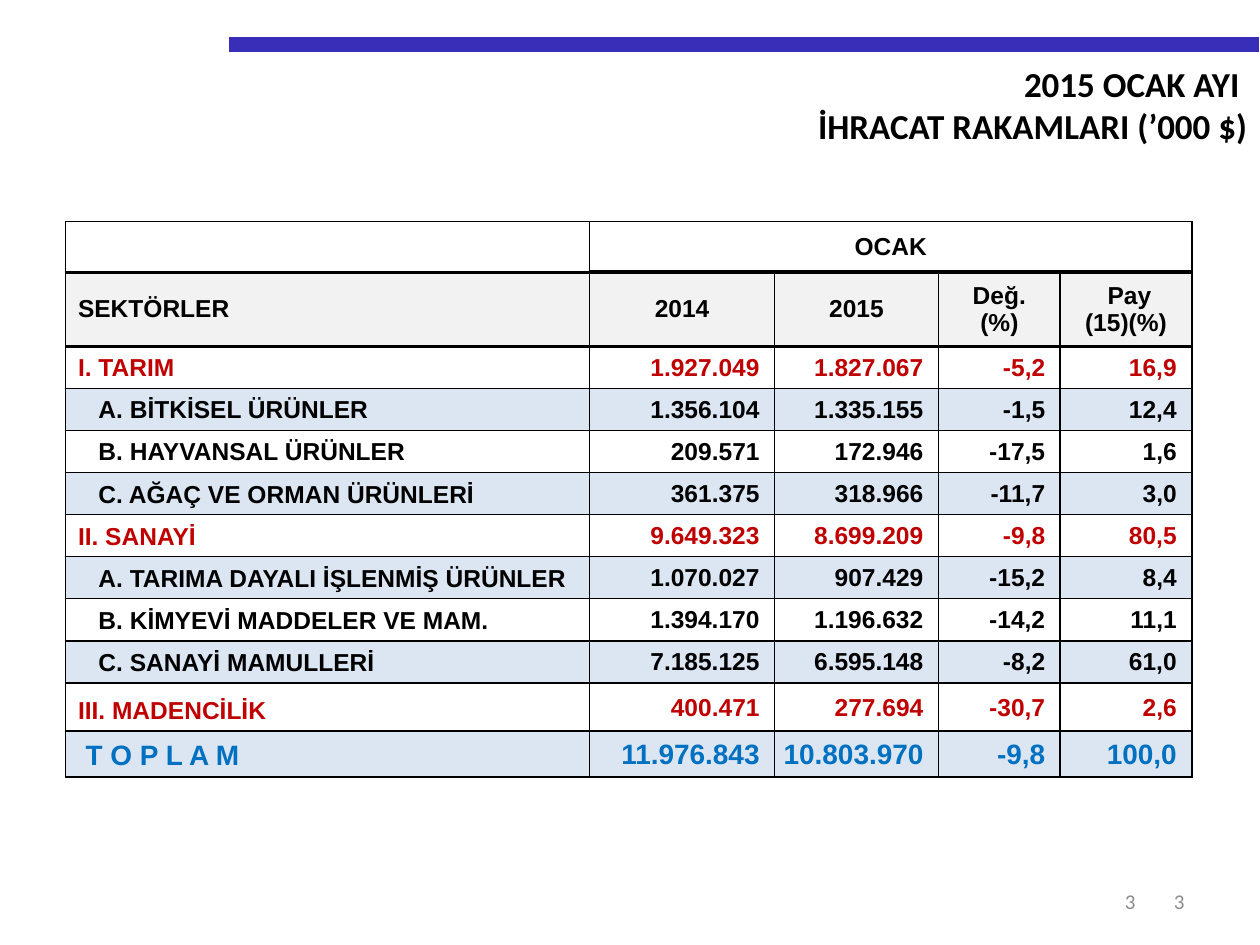
from lxml.etree import SubElement
from pptx import Presentation
from pptx.dml.color import RGBColor
from pptx.enum.shapes import MSO_CONNECTOR as Conn
from pptx.enum.text import MSO_ANCHOR as Anchor, PP_ALIGN as Align
from pptx.oxml import parse_xml
from pptx.oxml.ns import nsdecls, qn
from pptx.util import Pt

BLACK = RGBColor(0x00, 0x00, 0x00)
GRAY = RGBColor(0x8C, 0x8C, 0x8C)
INDIGO = RGBColor(0x38, 0x2E, 0xB8)
RED = RGBColor(0xC0, 0x00, 0x00)
BLUE = RGBColor(0x00, 0x70, 0xC0)
PALE = RGBColor(0xDC, 0xE6, 0xF2)
LIGHT = RGBColor(0xF2, 0xF2, 0xF2)

HEAD = ["SEKTÖRLER", "2014", "2015", "Değ. (%)", " Pay\n(15)(%)"]
ROWS = [
    ("I. TARIM", "1.927.049", "1.827.067", "-5,2", "16,9"),
    ("A. BİTKİSEL ÜRÜNLER", "1.356.104", "1.335.155", "-1,5", "12,4"),
    ("B. HAYVANSAL ÜRÜNLER", "209.571", "172.946", "-17,5", "1,6"),
    ("C. AĞAÇ VE ORMAN ÜRÜNLERİ", "361.375", "318.966", "-11,7", "3,0"),
    ("II. SANAYİ", "9.649.323", "8.699.209", "-9,8", "80,5"),
    ("A. TARIMA DAYALI İŞLENMİŞ ÜRÜNLER", "1.070.027", "907.429", "-15,2", "8,4"),
    ("B. KİMYEVİ MADDELER VE MAM.", "1.394.170", "1.196.632", "-14,2", "11,1"),
    ("C. SANAYİ MAMULLERİ", "7.185.125", "6.595.148", "-8,2", "61,0"),
    ("III. MADENCİLİK", "400.471", "277.694", "-30,7", "2,6"),
    ("T O P L A M", "11.976.843", "10.803.970", "-9,8", "100,0"),
]
COLS = [299.5, 105.8, 93.6, 69.6, 75.2]
HIGHS = [28.8, 42.4] + [24] * 8 + [27.5, 26.3]


def put(frame, text, font="Arial", size=14, color=BLACK, bold=True,
        align=Align.LEFT):
    """Write text into a frame, one paragraph for each line."""
    frame.word_wrap = True
    for i, line in enumerate(text.split("\n")):
        para = frame.add_paragraph() if i else frame.paragraphs[0]
        para.alignment = align
        run = para.add_run()
        run.text = line
        run.font.name, run.font.size = font, Pt(size)
        run.font.bold, run.font.color.rgb = bold, color


def add_box(slide, box, text, anchor=Anchor.TOP, **form):
    frame = slide.shapes.add_textbox(*map(Pt, box)).text_frame
    frame.vertical_anchor = anchor
    put(frame, text, font="Calibri", align=Align.RIGHT, **form)


def add_bar(slide, left, top, width):
    bar = slide.shapes.add_connector(
        Conn.STRAIGHT, Pt(left), Pt(top), Pt(left + width), Pt(top))
    bar.line.color.rgb = INDIGO
    bar.line.width = Pt(8.5)
    SubElement(bar._element.spPr, qn("a:effectLst"))


def edge(cell, top=1, bottom=1):
    """Draw the four borders of a cell."""
    props = cell._tc.get_or_add_tcPr()
    sides = [("L", 1), ("R", 1), ("T", top), ("B", bottom)]
    for i, (side, width) in enumerate(sides):
        props.insert(i, parse_xml(
            f'<a:ln{side} {nsdecls("a")} w="{Pt(width)}"><a:solidFill>'
            f'<a:srgbClr val="{BLACK}"/></a:solidFill></a:ln{side}>'))


def style(cell, fill=None, anchor=Anchor.MIDDLE, **widths):
    cell.vertical_anchor = anchor
    if fill is None:
        cell.fill.background()
    else:
        cell.fill.solid()
        cell.fill.fore_color.rgb = fill
    edge(cell, **widths)


def add_head(grid):
    # Month row
    for col in range(len(COLS)):
        style(grid.cell(0, col), bottom=2.25 if col else 2)
    grid.cell(0, 1).merge(grid.cell(0, 4))
    put(grid.cell(0, 1).text_frame, "OCAK", align=Align.CENTER)
    # Column names
    for col, name in enumerate(HEAD):
        cell = grid.cell(1, col)
        style(cell, LIGHT, top=2.25 if col else 2, bottom=2)
        put(cell.text_frame, name, align=Align.CENTER if col else Align.LEFT)


def add_body(grid):
    for i, row in enumerate(ROWS):
        total = i == len(ROWS) - 1
        sub = row[0][:2] in ("A.", "B.", "C.")
        color = BLUE if total else BLACK if sub else RED
        indent = 4.4 if total else 11.7 if sub else 0
        for col, text in enumerate(row):
            cell = grid.cell(i + 2, col)
            style(cell, PALE if i % 2 else None,
                  Anchor.MIDDLE if col else Anchor.BOTTOM,
                  top=1 if i else 2)
            if col:
                cell.margin_left = cell.margin_top = Pt(0.7)
                cell.margin_right, cell.margin_bottom = Pt(8.6), Pt(0)
            else:
                cell.margin_left = Pt(7.2 + indent)
            put(cell.text_frame, text, size=16 if total else 14, color=color,
                align=Align.RIGHT if col else Align.LEFT)


def add_grid(slide, left, top):
    grid = slide.shapes.add_table(
        len(HIGHS), len(COLS), Pt(left), Pt(top),
        Pt(sum(COLS)), Pt(sum(HIGHS))).table
    grid.first_row = grid.horz_banding = False
    for col, width in zip(grid.columns, COLS):
        col.width = Pt(width)
    for row, high in zip(grid.rows, HIGHS):
        row.height = Pt(high)
    add_head(grid)
    add_body(grid)


def main():
    deck = Presentation()
    deck.slide_width, deck.slide_height = Pt(720), Pt(540)
    slide = deck.slides.add_slide(deck.slide_layouts[6])
    # Top bar and title
    add_bar(slide, 131, 25.4, 588.5)
    add_box(slide, (76.3, 32.4, 643.7, 55.4),
            "2015 OCAK AYI \nİHRACAT RAKAMLARI (’000 $)", size=20)
    # Export figures
    add_grid(slide, 37.4, 126.7)
    # Page numbers
    for left, width in ((516, 168), (504.7, 151.2)):
        add_box(slide, (left, 500.5, width, 28.8), "3", Anchor.MIDDLE,
                size=12, color=GRAY, bold=False)
    deck.save("out.pptx")


if __name__ == "__main__":
    main()
